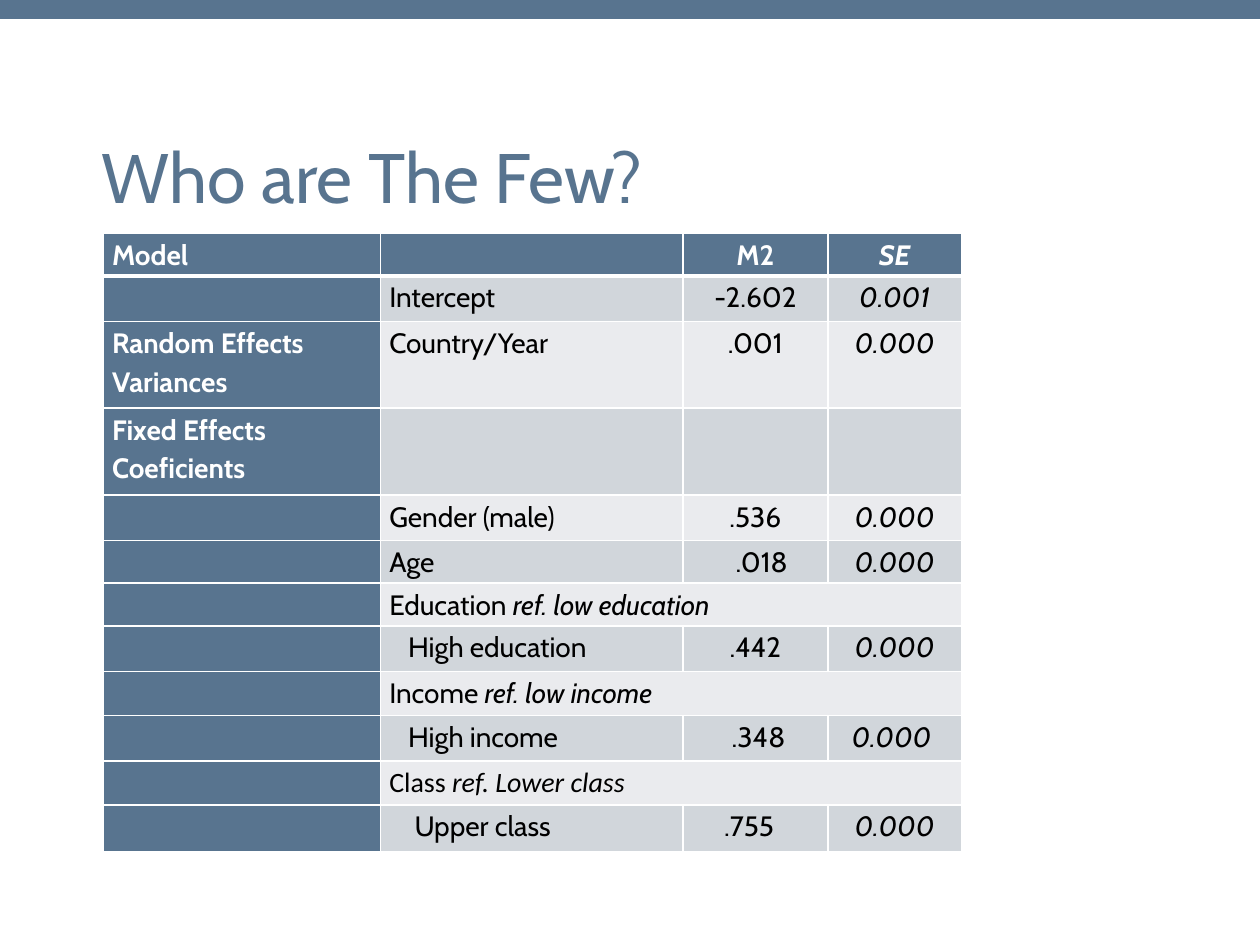
from lxml import etree
from pptx import Presentation
from pptx import util as u
from pptx.dml.color import RGBColor
from pptx.enum import shapes, text
from pptx.oxml.ns import qn

COLORS = {"slate": "58748F", "white": "FFFFFF", "black": "000000",
          "dark band": "D1D6DB", "light band": "EAEBEE"}
FONT = "Cabin"
WIDTH, HEIGHT = 10, 7.5
TABLE_LEFT, TABLE_TOP = 0.82, 1.85
COLUMNS = [2.2, 2.4, 1.15, 1.06]
INSET = 0.07

TITLE = "Who are The Few?"
HEADER = ["Model", "", "M2", "SE"]
# Row height, group lines, term, reference category, estimate, standard error
ROWS = [
    (0.36, [], "Intercept", "", "-2.602", "0.001"),
    (0.69, ["Random Effects Variances"], "Country/Year", "", ".001", "0.000"),
    (0.69, ["Fixed Effects", "Coeficients"], "", "", "", ""),
    (0.36, [], "Gender (male)", "", ".536", "0.000"),
    (0.34, [], "Age", "", ".018", "0.000"),
    (0.34, [], "Education ", "ref. low education", "", ""),
    (0.36, [], "High education", "", ".442", "0.000"),
    (0.35, [], "Income ", "ref. low income", "", ""),
    (0.36, [], "High income", "", ".348", "0.000"),
    (0.35, [], "Class ", "ref. Lower class", "", ""),
    (0.37, [], "Upper class", "", ".755", "0.000"),
]
HEADER_HEIGHT = 0.34
ROW_FONTS = {"Class ": "Calibri"}
INDENTS = {"High education": 0.15, "High income": 0.15, "Upper class": 0.2}
# Extra left inset (positive) or right inset (negative) of centred numbers
SHIFTS = {("Age", 2): 0.1, ("High income", 2): 0.05,
          ("High income", 3): -0.05, ("Upper class", 2): -0.1}


def rgb(name):
    return RGBColor.from_string(COLORS[name])


def add_span(para, words, size=16, color="black", bold=False, italic=False,
             font=FONT):
    span = para.add_run()
    span.text = words
    span.font.name, span.font.size = font, u.Pt(size)
    span.font.bold, span.font.italic = bold, italic
    span.font.color.rgb = rgb(color)


def add_border(cell, side, points):
    line = etree.SubElement(cell._tc.get_or_add_tcPr(), qn("a:ln" + side),
                            w=str(u.Pt(points)))
    fill = etree.SubElement(line, qn("a:solidFill"))
    etree.SubElement(fill, qn("a:srgbClr"), val=COLORS["white"])


def fill_cell(cell, paragraphs, fill, top=1, bottom=1, centered=False,
              after=10, shift=0, **style):
    """Format a cell; each paragraph is a list of (words, italic) pairs."""
    for side, points in zip("LRTB", (1, 1, top, bottom)):
        add_border(cell, side, points)
    cell.fill.solid()
    cell.fill.fore_color.rgb = rgb(fill)
    cell.margin_left = u.Inches(INSET + max(shift, 0))
    cell.margin_right = u.Inches(INSET + max(-shift, 0))
    cell.margin_top = cell.margin_bottom = 0
    frame = cell.text_frame
    for number, spans in enumerate(paragraphs):
        para = frame.add_paragraph() if number else frame.paragraphs[0]
        para.line_spacing = 1.15
        para.space_after = u.Pt(after)
        para.alignment = text.PP_ALIGN.CENTER if centered else text.PP_ALIGN.LEFT
        for words, italic in spans:
            add_span(para, words, italic=italic, **style)
    if not paragraphs:
        etree.SubElement(frame.paragraphs[0]._p, qn("a:endParaRPr"), sz="1600")


def add_results(page):
    heights = [HEADER_HEIGHT] + [row[0] for row in ROWS]
    table = page.shapes.add_table(
        len(heights), len(COLUMNS), u.Inches(TABLE_LEFT), u.Inches(TABLE_TOP),
        u.Inches(sum(COLUMNS)), u.Inches(sum(heights))).table
    table.first_col = True
    for column, width in zip(table.columns, COLUMNS):
        column.width = u.Inches(width)
    for row, height in zip(table.rows, heights):
        row.height = u.Inches(height)

    for col, words in enumerate(HEADER):
        fill_cell(table.cell(0, col), [[(words, col == 3)]] if words else [],
                  "slate", bottom=3, centered=col > 1, color="white", bold=True)

    for r, (_, group, term, reference, *numbers) in enumerate(ROWS, 1):
        top = 3 if r == 1 else 1
        band = "dark band" if r % 2 else "light band"
        fill_cell(table.cell(r, 0), [[(line, False)] for line in group],
                  "slate", top=top, after=0, color="white", bold=True)
        spans = [(term, False)] + ([(reference, True)] if reference else [])
        fill_cell(table.cell(r, 1), [spans] if term else [], band, top=top,
                  shift=INDENTS.get(term, 0), font=ROW_FONTS.get(term, FONT))
        for col, number in enumerate(numbers, 2):
            fill_cell(table.cell(r, col),
                      [[(number, col == 3)]] if number else [], band, top=top,
                      centered=True, shift=SHIFTS.get((term, col), 0))
        if reference:
            table.cell(r, 1).merge(table.cell(r, 3))


def main():
    deck = Presentation()
    deck.slide_width, deck.slide_height = u.Inches(WIDTH), u.Inches(HEIGHT)
    page = deck.slides.add_slide(deck.slide_layouts[6])

    bar = page.shapes.add_shape(shapes.MSO_SHAPE.RECTANGLE, 0, 0,
                                deck.slide_width, u.Inches(HEIGHT * 0.02))
    bar.shadow.inherit = False
    bar.fill.solid()
    bar.fill.fore_color.rgb = rgb("slate")
    bar.line.fill.background()

    box = page.shapes.add_textbox(u.Inches(0.71), u.Inches(1.02),
                                  u.Inches(8.6), u.Inches(0.83))
    box.text_frame.word_wrap = True
    box.text_frame.vertical_anchor = text.MSO_ANCHOR.MIDDLE
    para = box.text_frame.paragraphs[0]
    para.line_spacing = 0.9
    add_span(para, TITLE, size=40, color="slate")

    add_results(page)
    deck.save("out.pptx")


if __name__ == "__main__":
    main()
